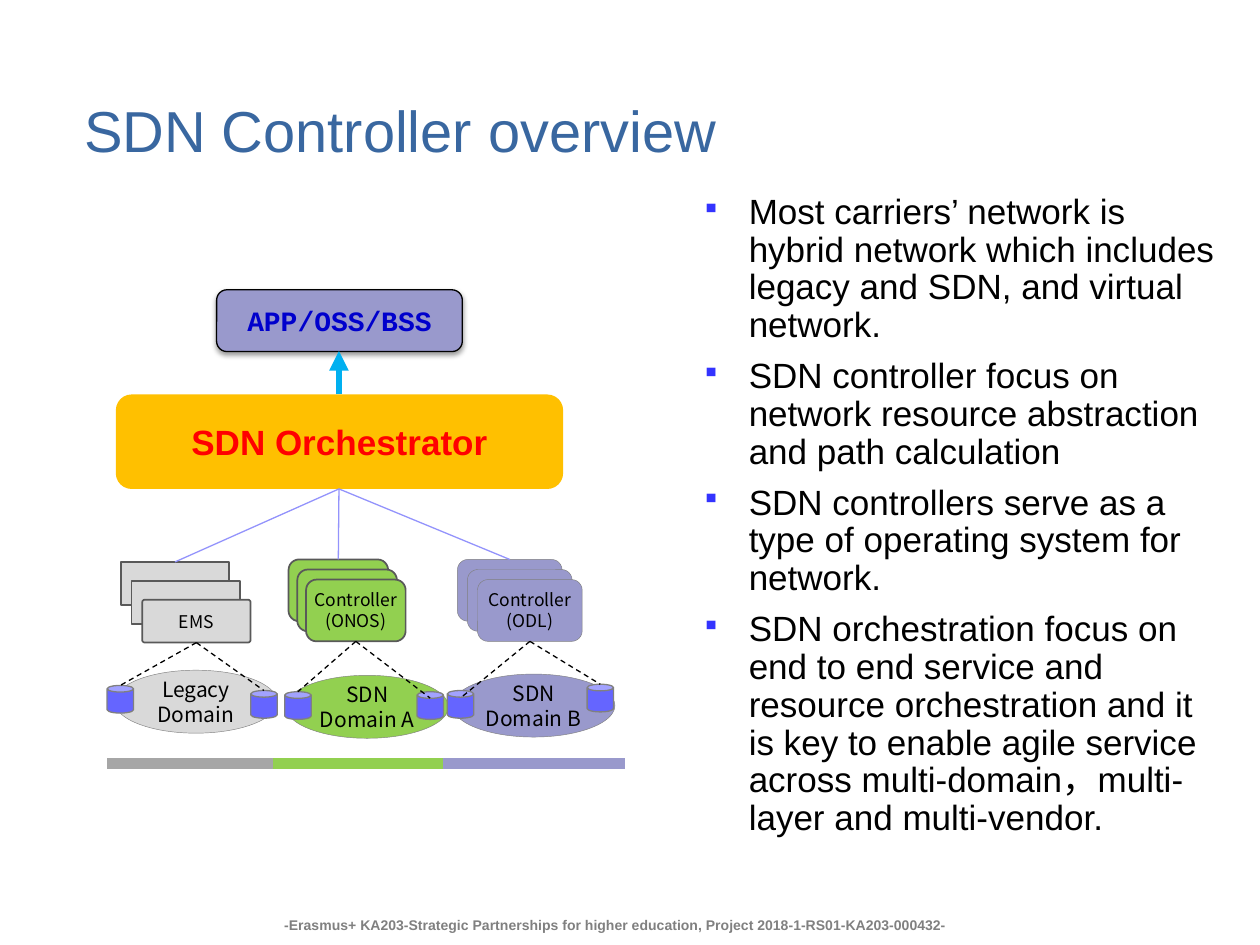
from pptx import Presentation
from pptx.dml.color import RGBColor
from pptx.enum.dml import MSO_LINE_DASH_STYLE as Dash
from pptx.enum.shapes import MSO_CONNECTOR, MSO_SHAPE as Geo
from pptx.enum.text import MSO_ANCHOR as Anchor, PP_ALIGN as Align
from pptx.oxml import parse_xml
from pptx.oxml.ns import nsdecls
from pptx.util import Pt

SANS, MONO, LABEL = "Arial", "Courier New", "Noto Sans CJK SC"
BLACK, GREY, GREEN, LILAC = "000000", "D9D9D9", "92D050", "9999CC"


def rgb(hex_color):
    return RGBColor.from_string(hex_color)


def write(shape, text, size, color=BLACK, font=LABEL, bold=False,
          align=Align.CENTER, anchor=Anchor.MIDDLE, inset=(0, 0)):
    frame = shape.text_frame
    frame.word_wrap = True
    frame.vertical_anchor = anchor
    frame.margin_left = frame.margin_right = Pt(inset[0])
    frame.margin_top = frame.margin_bottom = Pt(inset[1])
    frame.text = text
    for paragraph in frame.paragraphs:
        paragraph.alignment = align
        for run in paragraph.runs:
            run.font.size, run.font.name, run.font.bold = Pt(size), font, bold
            run.font.color.rgb = rgb(color)
    return frame.paragraphs


def textbox(slide, box):
    return slide.shapes.add_textbox(*(Pt(v) for v in box))


def block(slide, geometry, box, fill, line=None, width=1):
    shape = slide.shapes.add_shape(geometry, *(Pt(v) for v in box))
    shape.shadow.inherit = False
    shape.fill.solid()
    shape.fill.fore_color.rgb = rgb(fill)
    if line:
        shape.line.color.rgb = rgb(line)
        shape.line.width = Pt(width)
    else:
        shape.line.fill.background()
    return shape


def link(slide, start, end, color, width=0.75, dash=None, arrow=False):
    line = slide.shapes.add_connector(
        MSO_CONNECTOR.STRAIGHT, *(Pt(v) for v in (*start, *end)))
    line.line.color.rgb = rgb(color)
    line.line.width = Pt(width)
    if dash:
        line.line.dash_style = dash
    if arrow:
        line.line._get_or_add_ln().append(
            parse_xml(f'<a:tailEnd {nsdecls("a")} type="triangle"/>'))
    line._element.spPr.append(parse_xml(f'<a:effectLst {nsdecls("a")}/>'))


def add_title(slide, box):
    paragraphs = write(textbox(slide, box), "SDN Controller overview", 33, "3967A0",
                       SANS, align=Align.LEFT, inset=(7.2, 3.6))
    paragraphs[0].line_spacing = 0.9


def add_footer(slide, box):
    write(textbox(slide, box),
          "-Erasmus+ KA203-Strategic Partnerships for higher education, "
          "Project 2018-1-RS01-KA203-000432-",
          8, "808080", SANS, True, inset=(7.2, 3.6))


def add_bullets(slide, box, points):
    paragraphs = write(textbox(slide, box), "\n".join(points), 20, BLACK, SANS,
                       align=Align.LEFT, anchor=Anchor.TOP, inset=(7.2, 3.6))
    for index, paragraph in enumerate(paragraphs):
        props = paragraph._p.get_or_add_pPr()
        props.set("marL", str(Pt(27)))
        props.set("indent", str(-Pt(27)))
        for bullet in ('buClr {}><a:srgbClr val="3333FF"/></a:buClr>',
                       'buSzPct {} val="75000"/>', 'buChar {} char="▪"/>'):
            props.append(parse_xml("<a:" + bullet.format(nsdecls("a"))))
        paragraph.line_spacing = 0.9
        if index:
            paragraph.space_before = Pt(7.5)


def add_card_stack(slide, box, step, label, fill, line, width, corners):
    """Three overlapping cards; returns the back card's top and the front card's bottom."""
    x, y, w, h = box
    dx, dy = step
    for depth, corner in enumerate(corners):
        card = block(slide, Geo.ROUNDED_RECTANGLE,
                     (x + depth * dx, y + depth * dy, w, h), fill, line, width)
        card.adjustments[0] = corner
    write(card, label, 10, inset=(2.9, 2.9))
    return (x + w / 2, y), (x + 2 * dx + w / 2, y + 2 * dy + h)


def add_domain(slide, origin, cards, step, label, style, cloud, name, nodes):
    """One network domain: its controllers, cloud and nodes; returns the top link point."""
    left, top = origin
    fill, line, width, corners = style
    oval = block(slide, Geo.OVAL, (left + cloud[0], top + cloud[1], 92.9, 36),
                 fill, "808080", 0.25)
    write(oval, name, 12, inset=(2.9, 2.9))
    for x, y, _ in nodes:
        block(slide, Geo.CAN, (left + x, top + y, 15.1, 15.8), "6565FF", "808080", 0.75)
    x, y, w, h = cards
    entry, foot = add_card_stack(slide, (left + x, top + y, w, h), step, label,
                                 fill, line, width, corners)
    for x, y, drop in nodes:
        link(slide, foot, (left + x + 7.5, top + y + drop), BLACK, dash=Dash.DASH)
    return entry


def add_architecture(slide, left, top):
    center = left + 132.5
    # Application layer, with a soft shadow
    app = block(slide, Geo.ROUNDED_RECTANGLE, (left + 62.6, top, 140.4, 35.3),
                LILAC, BLACK, 0.75)
    write(app, "APP/OSS/BSS", 16, "0000CC", MONO, True)
    app._element.spPr.find(
        "{http://schemas.openxmlformats.org/drawingml/2006/main}effectLst").append(parse_xml(
            f'<a:outerShdw {nsdecls("a")} blurRad="{Pt(3.1)}" dist="{Pt(1.6)}" dir="5400000">'
            '<a:srgbClr val="000000"><a:alpha val="38000"/></a:srgbClr></a:outerShdw>'))
    link(slide, (center, top + 59.8), (center, top + 35), "00B0F0", 3.75, arrow=True)

    # Orchestration layer
    orchestrator = block(slide, Geo.ROUNDED_RECTANGLE,
                         (left + 5, top + 59.8, 255.6, 54), "FFC000")
    write(orchestrator, "SDN Orchestrator", 20, "FF0000", SANS, True)

    # Domains: cards, step, label, style, cloud, name, nodes (x, y, drop)
    rounded = (0.17,) * 3
    domains = [
        ((7.9, 155.5, 61.9, 24.5), (6.1, 10.8), "EMS",
         (GREY, "595959", 1, (0, 0, 0.06)), (4.3, 217.4), "Legacy\nDomain",
         [(0, 226.1, 0), (82.1, 229, 0)]),
        ((103.7, 154.1, 56.9, 35.3), (5, 5.75), "Controller\n(ONOS)",
         (GREEN, "595959", 1, rounded), (102.2, 220.3), "SDN\nDomain A",
         [(101.5, 229.7, 0), (177.1, 229.7, 3.6)]),
        ((200.2, 154.1, 59.8, 35.3), (5.75, 5.75), "Controller\n(ODL)",
         (LILAC, "808080", 0.25, rounded), (197.3, 219.6), "SDN\nDomain B",
         [(194.4, 229, 4.3), (274.3, 225.4, 0)]),
    ]
    for domain in domains:
        entry = add_domain(slide, (left, top), *domain)
        link(slide, (center, top + 113.8), entry, "9393FC")

    # Colour band under the domains
    for start, end, color in ((0, 95, "A6A6A6"), (95, 192.2, GREEN), (192.2, 296, LILAC)):
        link(slide, (left + start, top + 270.7), (left + end, top + 270.7), color, 6.75)


def main():
    deck = Presentation()
    deck.slide_width, deck.slide_height = Pt(720), Pt(540)
    slide = deck.slides.add_slide(deck.slide_layouts[6])
    add_footer(slide, (150.5, 519.8, 402.5, 17.3))
    add_bullets(slide, (393.8, 107.3, 313.9, 375.1), [
        "Most carriers’ network is hybrid network which includes legacy and SDN, "
        "and virtual network.",
        "SDN controller focus on network resource abstraction and path calculation",
        "SDN controllers serve as a type of operating system for network.",
        "SDN orchestration focus on end to end service and resource orchestration and it is "
        "key to enable agile service across multi-domain，multi-layer and multi-vendor.",
    ])
    add_architecture(slide, 61.2, 165.6)
    add_title(slide, (41, 47.5, 648, 58.3))
    deck.save("out.pptx")


if __name__ == "__main__":
    main()
